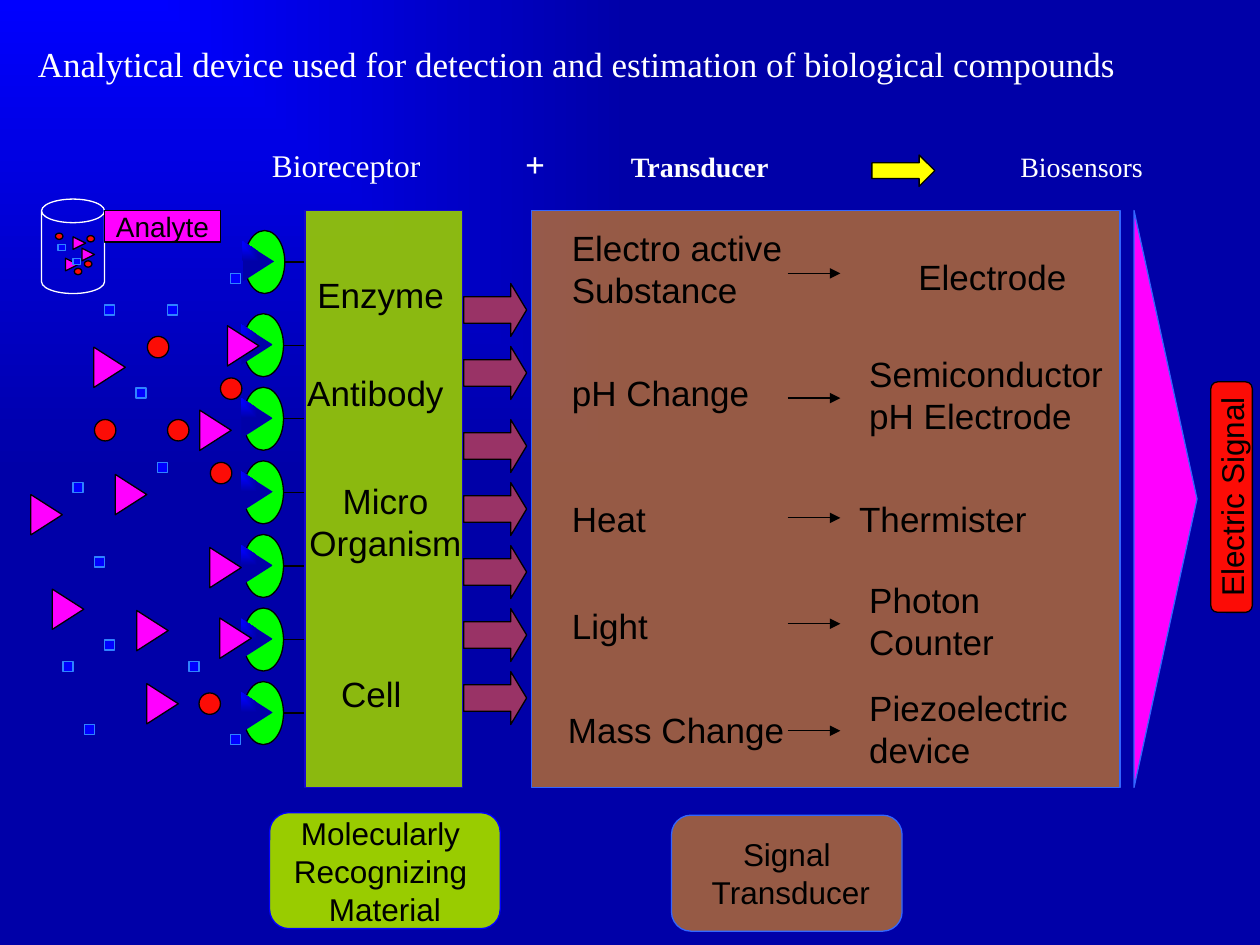
from lxml import etree
from pptx import Presentation
from pptx.dml.color import RGBColor
from pptx.enum.shapes import MSO_CONNECTOR, MSO_SHAPE
from pptx.enum.text import MSO_ANCHOR, PP_ALIGN
from pptx.oxml.ns import qn
from pptx.util import Inches, Pt

RECT, ROUND_RECT = MSO_SHAPE.RECTANGLE, MSO_SHAPE.ROUNDED_RECTANGLE
OVAL, CAN = MSO_SHAPE.OVAL, MSO_SHAPE.CAN
TRIANGLE, ARROW = MSO_SHAPE.FLOWCHART_EXTRACT, MSO_SHAPE.RIGHT_ARROW
STRAIGHT = MSO_CONNECTOR.STRAIGHT
LEFT, CENTER = PP_ALIGN.LEFT, PP_ALIGN.CENTER
TOP, MIDDLE = MSO_ANCHOR.TOP, MSO_ANCHOR.MIDDLE
SANS, SERIF = "Arial", "Times New Roman"

COLORS = {
    "black": "000000", "white": "FFFFFF", "blue": "0000FF", "navy": "0000A8",
    "magenta": "FF00FF", "red": "FC0C06", "green": "00FF00", "lime": "99CC00",
    "orange": "FF9900", "plum": "993366", "yellow": "FFFF00",
    "edge": "3366FF", "square edge": "2F83FF", "receptor edge": "1709CB",
}

TITLE = "Analytical device used for detection and estimation of biological compounds"
# text, size, bold
EQUATION = [("Bioreceptor\t", 18, False), ("+\t", 20, True),
            ("Transducer\t", 16, True), ("Biosensors", 16, False)]
EQUATION_TABS = [2.01, 2.85, 5.94]

# text, left, top, width, height, alignment
BIORECEPTORS = [
    ("Enzyme", 2.42, 2.12, 1.33, 0.43, LEFT),
    ("Antibody", 2.34, 2.9, 1.5, 0.43, LEFT),
    ("Micro Organism", 2.31, 3.76, 1.5, 0.77, CENTER),
    ("Cell", 2.61, 5.29, 0.97, 0.43, LEFT),
]
# effect (left, top), arrow height, detector (left, top)
TRANSDUCERS = [
    ("Electro active\nSubstance", 4.44, 1.75, 2.17, "Electrode", 7.19, 1.98),
    ("pH Change", 4.44, 2.9, 3.16, "Semiconductor pH Electrode", 6.8, 2.75),
    ("Heat", 4.44, 3.9, 4.11, "Thermister", 6.72, 3.9),
    ("Light", 4.44, 4.75, 4.95, "Photon Counter", 6.8, 4.54),
    ("Mass Change", 4.41, 5.57, 5.8, "Piezoelectric device", 6.8, 5.4),
]
SIGNAL_ARROW_TOPS = [2.25, 2.75, 3.33, 3.83, 4.33, 4.83, 5.33]
RECEPTORS = [(1.93, 2.49 + 0.584 * row) for row in range(6)] + [(1.94, 1.83)]

BEAKER_PARTICLES = {
    "triangle": [(0.58, 1.88), (0.65, 1.97), (0.52, 2.05)],
    "square": [(0.46, 1.94), (0.58, 2.05)],
    "circle": [(0.69, 1.87), (0.67, 2.07), (0.59, 2.13), (0.44, 1.85)],
}
FREE_PARTICLES = {
    "triangle": [(1.77, 2.62), (1.63, 4.38), (1.71, 4.94), (0.71, 2.79),
                 (0.88, 3.8), (0.21, 3.96), (0.38, 4.71), (1.05, 4.88),
                 (1.13, 5.46), (1.55, 3.29)],
    "circle": [(0.75, 3.33), (1.17, 2.67), (1.33, 3.33), (1.58, 5.5),
               (1.67, 3.67), (1.75, 3)],
    "square": [(0.83, 2.42), (1.08, 3.08), (1.25, 3.67), (0.58, 3.83),
               (0.75, 4.42), (0.83, 5.08), (0.5, 5.25), (0.67, 5.75),
               (1.83, 5.83), (1.5, 5.25), (1.83, 2.17), (1.33, 2.42)],
}
BEAKER_SIZES = {"triangle": (0.1, 0.1), "square": (0.06, 0.05), "circle": (0.06, 0.05)}
FREE_SIZES = {"triangle": (0.32, 0.25), "square": (0.08, 0.08), "circle": (0.17, 0.17)}
# preset, fill, line, rotation
PARTICLE_STYLES = {
    "triangle": (TRIANGLE, "magenta", "black", 90),
    "square": (RECT, "blue", "square edge", 0),
    "circle": (OVAL, "red", "black", 0),
}


def rgb(name):
    return RGBColor.from_string(COLORS[name])


def set_corner_gradient(fill):
    """Rectangular gradient that spreads from the top left corner."""
    fill.gradient()
    for stop, name in zip(fill.gradient_stops, ("blue", "navy")):
        stop.color.rgb = rgb(name)
    linear = fill._xPr.find(".//" + qn("a:lin"))
    corner = etree.Element(qn("a:path"), {"path": "rect"})
    etree.SubElement(corner, qn("a:fillToRect"), r="100000", b="100000")
    linear.getparent().replace(linear, corner)


def add_run(paragraph, text, size, font=SANS, color="black", bold=False):
    run = paragraph.add_run()
    run.text = text
    run.font.name, run.font.size, run.font.bold = font, Pt(size), bold
    run.font.color.rgb = rgb(color)


def write_lines(frame, text, size, alignment):
    for index, line in enumerate(text.split("\n")):
        paragraph = frame.add_paragraph() if index else frame.paragraphs[0]
        paragraph.alignment = alignment
        add_run(paragraph, line, size)


def add_box(parent, preset, box, fill=None, line=None, rotation=0, alpha=100,
            adjustments=(), text="", size=18):
    shape = parent.shapes.add_shape(preset, *map(Inches, box))
    shape.shadow.inherit = False
    shape.rotation = rotation
    for index, value in enumerate(adjustments):
        shape.adjustments[index] = value
    if fill == "gradient":
        set_corner_gradient(shape.fill)
    elif fill:
        shape.fill.solid()
        shape.fill.fore_color.rgb = rgb(fill)
        if alpha < 100:
            color = shape.fill._xPr.find(".//" + qn("a:srgbClr"))
            etree.SubElement(color, qn("a:alpha"), val=str(alpha * 1000))
    else:
        shape.fill.background()
    if line:
        shape.line.color.rgb = rgb(line)
        shape.line.width = Pt(0.75)
    else:
        shape.line.fill.background()
    if text:
        shape.text_frame.word_wrap = False
        shape.text_frame.vertical_anchor = MIDDLE
        write_lines(shape.text_frame, text, size, CENTER)


def add_label(parent, text, box, alignment=LEFT):
    frame = parent.shapes.add_textbox(*map(Inches, box)).text_frame
    frame.word_wrap = True
    write_lines(frame, text, 20, alignment)


def add_line(parent, left, right, y, arrow=False):
    connector = parent.shapes.add_connector(
        STRAIGHT, Inches(left), Inches(y), Inches(right), Inches(y))
    connector.line.color.rgb = rgb("black")
    connector.line.width = Pt(0.75)
    if arrow:
        etree.SubElement(connector.line._get_or_add_ln(), qn("a:tailEnd"), type="triangle")
    etree.SubElement(connector._element.spPr, qn("a:effectLst"))


def add_particles(parent, particles, sizes):
    for kind, places in particles.items():
        preset, fill, line, rotation = PARTICLE_STYLES[kind]
        for place in places:
            add_box(parent, preset, place + sizes[kind], fill, line, rotation)


def add_title(slide):
    title = slide.shapes.title
    title.left, title.top, title.width, title.height = map(Inches, (0, 0.29, 10, 0.74))
    title.text_frame.vertical_anchor = TOP
    paragraph = title.text_frame.paragraphs[0]
    paragraph.alignment = LEFT
    paragraph._p.get_or_add_pPr().set("marL", str(Inches(0.2)))
    add_run(paragraph, TITLE, 20, SERIF, "white")


def add_equation(slide):
    frame = slide.shapes.add_textbox(*map(Inches, (2.06, 1.08, 7.94, 0.44))).text_frame
    frame.word_wrap = True
    paragraph = frame.paragraphs[0]
    tabs = etree.SubElement(paragraph._p.get_or_add_pPr(), qn("a:tabLst"))
    for position in EQUATION_TABS:
        etree.SubElement(tabs, qn("a:tab"), pos=str(Inches(position)), algn="l")
    for text, size, bold in EQUATION:
        add_run(paragraph, text, size, SERIF, "white", bold)
    add_box(slide, ARROW, (6.92, 1.23, 0.5, 0.25), "yellow", "black")


def add_bioreceptor(slide):
    group = slide.shapes.add_group_shape()
    for left, top in RECEPTORS:
        add_box(group, OVAL, (left, top, 0.32, 0.5), "green", "black")
        add_box(group, TRIANGLE, (left - 0.05, top + 0.12, 0.32, 0.25), "gradient", rotation=90)
        add_line(group, left + 0.32, left + 0.49, top + 0.25)
    add_box(group, RECT, (2.42, 1.67, 1.25, 4.58), "lime", "receptor edge", alpha=91)
    for text, *box, alignment in BIORECEPTORS:
        add_label(group, text, box, alignment)


def add_transducer(slide):
    group = slide.shapes.add_group_shape()
    add_box(group, RECT, (4.22, 1.67, 4.67, 4.58), "orange", "edge", alpha=59)
    for effect, left, top, arrow_y, detector, detector_left, detector_top in TRANSDUCERS:
        add_label(group, effect, (left, top, 2, 0.77 if "\n" in effect else 0.43))
        add_line(group, 6.25, 6.67, arrow_y, arrow=True)
        height = 0.77 if " " in detector else 0.43
        add_label(group, detector, (detector_left, detector_top, 2.08, height))


def main():
    presentation = Presentation()
    presentation.slide_width, presentation.slide_height = Inches(10), Inches(7.5)
    slide = presentation.slides.add_slide(presentation.slide_layouts[5])
    set_corner_gradient(slide.background.fill)
    add_title(slide)
    add_box(slide, TRIANGLE, (6.96, 3.71, 4.58, 0.5), "magenta", "edge", 90)
    arrows = slide.shapes.add_group_shape()
    for top in SIGNAL_ARROW_TOPS:
        add_box(arrows, ARROW, (3.68, top, 0.5, 0.42), "plum", "black", adjustments=(0.5, 0.3))
    add_bioreceptor(slide)
    add_particles(slide.shapes.add_group_shape(), BEAKER_PARTICLES, BEAKER_SIZES)
    add_particles(slide, FREE_PARTICLES, FREE_SIZES)
    add_box(slide, ROUND_RECT, (2.14, 6.45, 1.83, 0.92), "lime", "blue",
            text="Molecularly \nRecognizing \nMaterial")
    add_box(slide, ROUND_RECT, (5.33, 6.47, 1.83, 0.92), "orange", "edge", alpha=59,
            text="Signal\n Transducer")
    add_box(slide, ROUND_RECT, (8.86, 3.78, 1.83, 0.33), "red", "black", 270,
            text="Electric Signal")
    add_transducer(slide)
    add_equation(slide)
    add_box(slide, CAN, (0.33, 1.58, 0.5, 0.75), line="white", adjustments=(0.375,))
    add_box(slide, RECT, (0.83, 1.67, 0.92, 0.25), "magenta", "black", text="Analyte", size=16)
    presentation.save("out.pptx")


if __name__ == "__main__":
    main()
